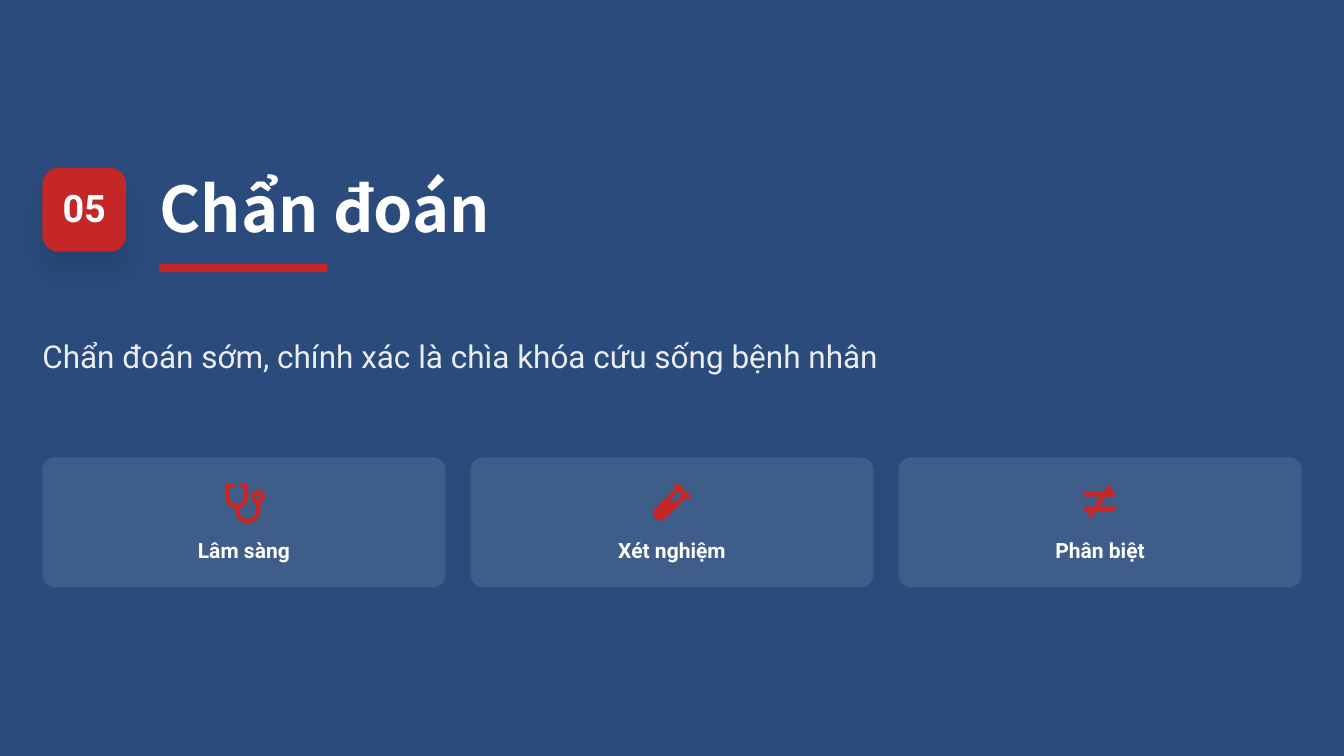
import math

import lxml.etree
import pptx
import pptx.dml.color
import pptx.enum.shapes
import pptx.enum.text
import pptx.oxml.ns
import pptx.util
from pptx.util import Inches

NAVY = pptx.dml.color.RGBColor(0x2A, 0x4B, 0x7C)
RED = pptx.dml.color.RGBColor(0xC5, 0x27, 0x26)
WHITE = pptx.dml.color.RGBColor(0xFF, 0xFF, 0xFF)
BODY_FONT = "Roboto"
TITLE_FONT = "Noto Sans CJK SC"
LEFT = pptx.enum.text.PP_ALIGN.LEFT
CENTER = pptx.enum.text.PP_ALIGN.CENTER
RECTANGLE = pptx.enum.shapes.MSO_SHAPE.RECTANGLE
ROUNDED = pptx.enum.shapes.MSO_SHAPE.ROUNDED_RECTANGLE


def add_child(parent, tag, **attributes):
    """Append a DrawingML element to parent and return it."""
    return lxml.etree.SubElement(parent, pptx.oxml.ns.qn(tag), attributes)


def set_alpha(fill_owner, percent):
    """Make the solid fill inside an XML element partly transparent."""
    color = fill_owner.find(pptx.oxml.ns.qn("a:solidFill"))[0]
    add_child(color, "a:alpha", val=str(percent * 1000))


def paint(shape, color):
    """Give a shape a flat fill without line or shadow."""
    shape.shadow.inherit = False
    shape.fill.solid()
    shape.fill.fore_color.rgb = color
    shape.line.fill.background()


def add_block(slide, kind, box, color, radius=0):
    """Add a flat rectangle, with rounded corners when a radius is given."""
    shape = slide.shapes.add_shape(kind, *map(Inches, box))
    paint(shape, color)
    if radius:
        shape.adjustments[0] = radius / min(box[2:])
    return shape


def write(shape, text, size, font=BODY_FONT, bold=True, align=CENTER, spacing=None):
    """Write one formatted, vertically centred line and return its run."""
    frame = shape.text_frame
    frame.text = text
    frame.word_wrap = True
    frame.auto_size = pptx.enum.text.MSO_AUTO_SIZE.NONE
    frame.vertical_anchor = pptx.enum.text.MSO_ANCHOR.MIDDLE
    frame.margin_left = frame.margin_right = frame.margin_top = frame.margin_bottom = 0
    paragraph = frame.paragraphs[0]
    paragraph.alignment = align
    paragraph.line_spacing = spacing
    run = paragraph.runs[0]
    run.font.name = font
    run.font.size = pptx.util.Pt(size)
    run.font.bold = bold
    run.font.color.rgb = WHITE
    return run


def arc(x, y, radius, start, end):
    """Return points along an arc, with angles in degrees clockwise from east."""
    steps = max(4, math.ceil(abs(end - start) / 12))
    angles = [math.radians(start + (end - start) * i / steps) for i in range(steps + 1)]
    return [(x + radius * math.cos(a), y + radius * math.sin(a)) for a in angles]


def stethoscope():
    """Return the stethoscope contours in hundredths of an inch."""
    outline = [
        *arc(8, 5, 5, 180, 270), *arc(13, 3, 3, -90, 90), (9, 6),
        *arc(18.5, 18, 9.5, 180, 0), (28, 6), *arc(25, 3, 3, 90, 270),
        *arc(29, 5, 5, -90, 0), *arc(18.5, 18, 15.5, 0, 78),
        *arc(33, 36, 11, 180, 0), *arc(47, 18, 9, 110, 430),
        *arc(33, 36, 17, 0, 180), *arc(18.5, 18, 15.5, 102, 180),
    ]
    return [outline, arc(47, 18, 3, 360, 0)]


def test_tube():
    """Return the test tube contours in hundredths of an inch."""
    outline = [
        *arc(31, 3, 3, -45, -225), (30, 6), *arc(9.5, 40, 9.5, 225, 45),
        (44, 20), (45, 21), *arc(47, 18, 3, 135, -45),
    ]
    return [outline, [(20, 25), (30, 25), (39, 15), (34, 10)]]


def not_equal():
    """Return the not-equal sign contour in hundredths of an inch."""
    return [[
        *arc(34.5, 6.5, 3, 33, -147), (26, 12), *arc(3, 15, 3, 270, 90),
        (22, 18), (14, 31), *arc(3, 34, 3, 270, 90), (9, 37),
        *arc(8.5, 43.5, 3, 213, 33), (17, 37), *arc(40, 34, 3, 90, -90),
        (21, 31), (29, 18), *arc(40, 15, 3, 90, -90), (34, 12),
    ]]


def add_icon(slide, left, top, contours):
    """Draw icon contours as one filled freeform at the given corner."""
    contours = [[(x * 10, y * 10) for x, y in points] for points in contours]
    builder = slide.shapes.build_freeform(*contours[0][0], scale=Inches(1) / 1000)
    builder.add_line_segments(contours[0][1:], close=True)
    for points in contours[1:]:
        builder.move_to(*points[0])
        builder.add_line_segments(points[1:], close=True)
    paint(builder.convert_to_shape(Inches(left), Inches(top)), RED)


def add_heading(slide, left, top, width, height):
    """Place the numbered badge, the title and its underline."""
    badge = add_block(slide, ROUNDED, (left, top, height, height), RED, 0.22)
    write(badge, "05", 36, spacing=0.9)
    effects = badge._element.spPr.find(pptx.oxml.ns.qn("a:effectLst"))
    shadow = add_child(
        effects, "a:outerShdw", blurRad=str(pptx.util.Pt(25)),
        dist=str(pptx.util.Pt(20)), dir="5400000", rotWithShape="0",
    )
    add_child(add_child(shadow, "a:srgbClr", val="000000"), "a:alpha", val="10000")

    title_left = left + 1.55
    title = slide.shapes.title
    title.left, title.top = Inches(title_left), Inches(top)
    title.width, title.height = Inches(width - 1.55), Inches(1.04)
    write(title, "Chẩn đoán", 60, TITLE_FONT, align=LEFT)
    add_block(slide, RECTANGLE, (title_left, top + 1.27, 2.22, 0.11), RED)


def add_subtitle(slide, left, top, width, height):
    """Place the slightly transparent subtitle line."""
    textbox = slide.shapes.add_textbox(*map(Inches, (left, top, width, height)))
    text = "Chẩn đoán sớm, chính xác là chìa khóa cứu sống bệnh nhân"
    run = write(textbox, text, 30, bold=False, align=LEFT, spacing=1.4)
    set_alpha(run.font._element, 90)


def add_card(slide, left, top, width, height, label, icon, icon_width):
    """Place a translucent card with a centred icon above its label."""
    card = add_block(slide, ROUNDED, (left, top, width, height), WHITE, 0.17)
    set_alpha(card._element.spPr, 10)
    add_icon(slide, left + (width - icon_width) / 2, top + 0.34, icon())
    box = (left + 0.26, top + 1, width - 0.52, 0.39)
    write(slide.shapes.add_textbox(*map(Inches, box)), label, 20, spacing=1.2)


def add_cards(slide, left, top, width, height):
    """Share the given box among the three diagnosis cards."""
    cards = [
        ("Lâm sàng", stethoscope, 0.56),
        ("Xét nghiệm", test_tube, 0.5),
        ("Phân biệt", not_equal, 0.44),
    ]
    gap = 0.33
    card_width = (width - gap * (len(cards) - 1)) / len(cards)
    for index, card in enumerate(cards):
        card_left = left + index * (card_width + gap)
        add_card(slide, card_left, top, card_width, height, *card)


def main():
    """Build and save the section slide."""
    presentation = pptx.Presentation()
    presentation.slide_width = Inches(17.78)
    presentation.slide_height = Inches(10)
    slide = presentation.slides.add_slide(presentation.slide_layouts[5])
    slide.background.fill.solid()
    slide.background.fill.fore_color.rgb = NAVY
    add_heading(slide, 0.56, 2.22, 6.27, 1.11)
    add_subtitle(slide, 0.56, 4.27, 12.65, 0.68)
    add_cards(slide, 0.56, 6.05, 16.66, 1.72)
    presentation.save("out.pptx")


if __name__ == "__main__":
    main()
